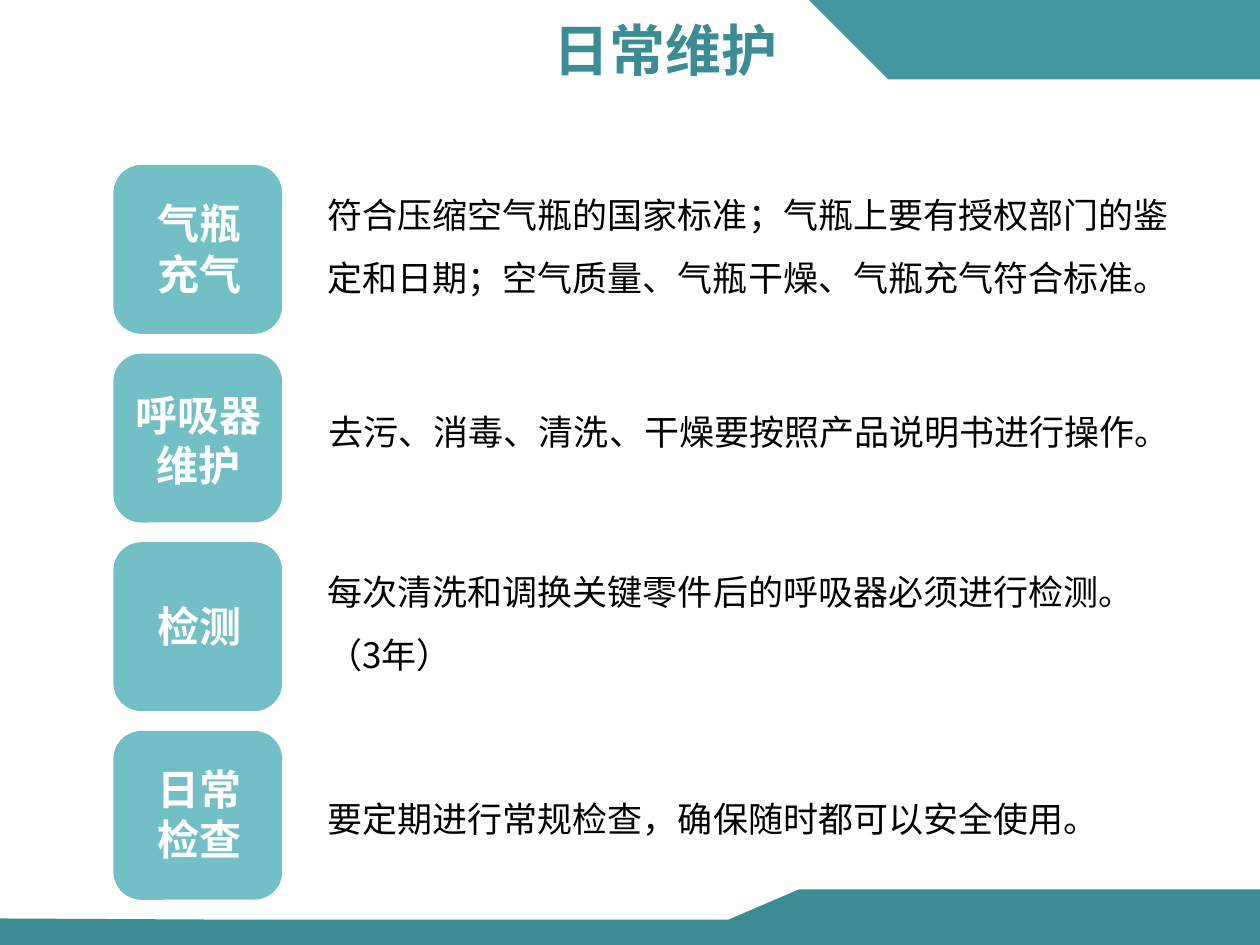
from lxml import etree
from pptx import Presentation
from pptx.dml.color import RGBColor
from pptx.enum.shapes import MSO_SHAPE
from pptx.enum.text import MSO_ANCHOR, MSO_AUTO_SIZE, PP_ALIGN
from pptx.oxml.ns import qn
from pptx.util import Inches, Pt

ROUNDED = MSO_SHAPE.ROUNDED_RECTANGLE
TOP, MIDDLE = MSO_ANCHOR.TOP, MSO_ANCHOR.MIDDLE
LEFT, CENTER = PP_ALIGN.LEFT, PP_ALIGN.CENTER
GROW = MSO_AUTO_SIZE.SHAPE_TO_FIT_TEXT

FONT = "Noto Sans CJK SC"
TEAL = RGBColor(0x45, 0x97, 0xA0)
DARK_TEAL = RGBColor(0x3C, 0x8C, 0x93)
LIGHT_TEAL = RGBColor(0x72, 0xBF, 0xC5)
WHITE = RGBColor(0xFF, 0xFF, 0xFF)
BLACK = RGBColor(0x00, 0x00, 0x00)

TOP_BAND = [(6.42, 0), (10, 0), (10, 0.63), (7.05, 0.63)]
BOTTOM_BAND = [(6.34, 7.06), (10, 7.06), (10, 7.5), (0, 7.5),
               (0, 7.29), (1.93, 7.3), (5.78, 7.3)]

TILE_LEFT, TILE_TOP, TILE_SIZE, TILE_PITCH = 0.9, 1.31, 1.34, 1.497

# Each row: label box, label lines, description box, description paragraphs
ROWS = [
    ((1.14, 1.52, 0.88, 0.91), ["气瓶", "充气"],
     (2.5, 1.32, 7.07, 1.11),
     ["符合压缩空气瓶的国家标准；气瓶上要有授权部门的鉴定和日期；空气质量、气瓶干燥、气瓶充气符合标准。"]),
    ((0.97, 3.04, 1.21, 0.91), ["呼吸器", "维护"],
     (2.51, 3.04, 6.83, 0.61),
     ["去污、消毒、清洗、干燥要按照产品说明书进行操作。"]),
    ((1.14, 4.72, 0.88, 0.5), ["检测"],
     (2.5, 4.31, 7.35, 1.05),
     ["每次清洗和调换关键零件后的呼吸器必须进行检测。", "（3年）"]),
    ((1.14, 6.01, 0.88, 0.91), ["日常", "检查"],
     (2.5, 6.11, 6.19, 0.61),
     ["要定期进行常规检查，确保随时都可以安全使用。"]),
]


def paint(sp, color):
    """Give a shape a plain fill without line or shadow."""
    sp.shadow.inherit = False
    sp.fill.solid()
    sp.fill.fore_color.rgb = color
    sp.line.fill.background()


def add_band(s, points, color):
    """Draw a filled outline through points given in inches."""
    start, *rest = [(Inches(x), Inches(y)) for x, y in points]
    builder = s.shapes.build_freeform(*start)
    builder.add_line_segments(rest, close=True)
    paint(builder.convert_to_shape(), color)


def add_tile(s, top):
    """Draw one rounded label tile."""
    sp = s.shapes.add_shape(ROUNDED, Inches(TILE_LEFT), Inches(top),
                            Inches(TILE_SIZE), Inches(TILE_SIZE))
    paint(sp, LIGHT_TEAL)


def write(tf, lines, size, color, bold=False, align=LEFT, spacing=None):
    """Write each line as a formatted paragraph."""
    for i, text in enumerate(lines):
        p = tf.add_paragraph() if i else tf.paragraphs[0]
        p.alignment = align
        p.line_spacing = spacing
        r = p.add_run()
        r.text = text
        r.font.size = Pt(size)
        r.font.bold = bold
        r.font.color.rgb = color
        r.font.name = FONT
        etree.SubElement(r.font._element, qn("a:ea"), typeface=FONT)


def add_text(s, box, lines, size, color, wrap=True, **style):
    """Add a text box that grows with its text."""
    tf = s.shapes.add_textbox(*map(Inches, box)).text_frame
    tf.word_wrap = wrap
    tf.auto_size = GROW
    tf.vertical_anchor = TOP
    write(tf, lines, size, color, **style)


def set_title(s, text):
    """Place and format the slide title."""
    title = s.shapes.title
    title.left, title.top = Inches(4.29), Inches(0.07)
    title.width, title.height = Inches(2), Inches(0.64)
    tf = title.text_frame
    tf.word_wrap = False
    tf.auto_size = GROW
    tf.vertical_anchor = MIDDLE
    write(tf, [text], 32, DARK_TEAL, bold=True)


def main():
    """Build the maintenance slide."""
    prs = Presentation()
    prs.slide_width, prs.slide_height = Inches(10), Inches(7.5)
    s = prs.slides.add_slide(prs.slide_layouts[5])
    add_band(s, TOP_BAND, TEAL)
    add_band(s, BOTTOM_BAND, DARK_TEAL)
    set_title(s, "日常维护")
    for i, (label_box, label, body_box, body) in enumerate(ROWS):
        add_tile(s, TILE_TOP + i * TILE_PITCH)
        add_text(s, body_box, body, 20, BLACK, spacing=1.5)
        add_text(s, label_box, label, 24, WHITE, wrap=False, bold=True, align=CENTER)
    prs.save("out.pptx")


if __name__ == "__main__":
    main()
